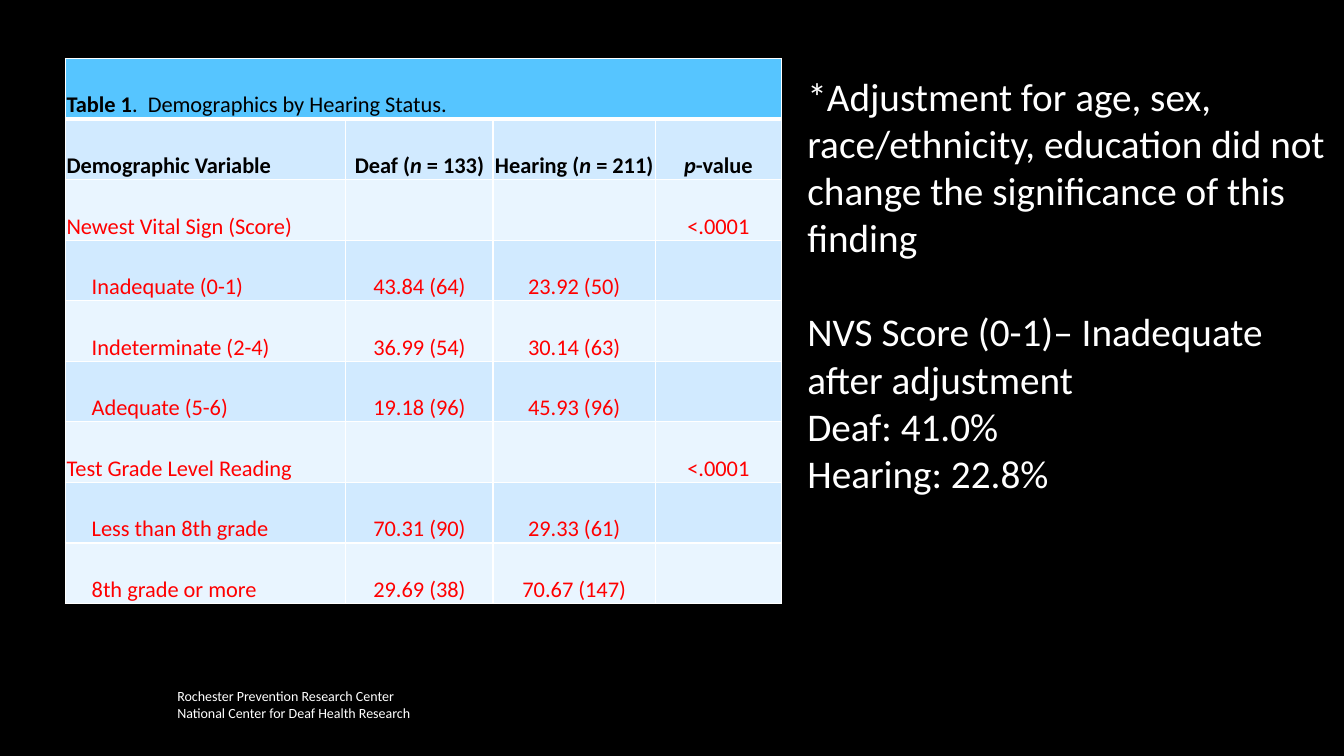
from lxml.etree import SubElement
from pptx import Presentation
from pptx.dml.color import RGBColor
from pptx.enum.text import MSO_ANCHOR as Anchor, PP_ALIGN as Align
from pptx.oxml.ns import qn
from pptx.util import Inches, Pt

COLORS = {"black": "000000", "white": "FFFFFF", "red": "FF0000",
          "title": "56C5FF", "dark_band": "D1EAFF", "light_band": "E9F5FF"}
FONT = "Calibri"
TITLE = [("Table 1", "b"), (".  Demographics by Hearing Status.", "")]
HEADINGS = [
    [("Demographic Variable", "b")],
    [("Deaf (", "b"), ("n", "bi"), (" = 133)", "b")],
    [("Hearing (", "b"), ("n", "bi"), (" = 211)", "b")],
    [("p", "bi"), ("-value", "b")],
]
MEASURES = [
    ("Newest Vital Sign (Score)", "", "", "<.0001"),
    ("Inadequate (0-1)", "43.84 (64)", "23.92 (50)", ""),
    ("Indeterminate (2-4)", "36.99 (54)", "30.14 (63)", ""),
    ("Adequate (5-6)", "19.18 (96)", "45.93 (96)", ""),
    ("Test Grade Level Reading", "", "", "<.0001"),
    ("Less than 8th grade", "70.31 (90)", "29.33 (61)", ""),
    ("8th grade or more", "29.69 (38)", "70.67 (147)", ""),
]
COLUMN_WIDTHS = [2.78, 1.46, 1.61, 1.25]
FINDINGS = [
    "*Adjustment for age, sex, race/ethnicity, education did not change "
    "the significance of this finding",
    "NVS Score (0-1)– Inadequate after adjustment",
    "Deaf: 41.0%",
    "Hearing: 22.8%",
]
CENTERS = ["Rochester Prevention Research Center",
           "National Center for Deaf Health Research"]


def rgb(name):
    """Return the named palette colour."""
    return RGBColor.from_string(COLORS[name])


def set_font(para, size, color):
    """Set the font that all runs of a paragraph share."""
    para.font.name = FONT
    para.font.size = Pt(size)
    para.font.color.rgb = rgb(color)


def add_border(cell, side, width):
    """Draw one white cell border."""
    line = SubElement(cell._tc.get_or_add_tcPr(), qn(f"a:ln{side}"), w=str(Pt(width)))
    fill = SubElement(line, qn("a:solidFill"))
    SubElement(fill, qn("a:srgbClr"), val=COLORS["white"])


def style_cell(cell, row, column, fill, indent):
    """Set the borders, fill, margins and anchor of a cell."""
    heavy_side = {0: "B", 1: "T"}.get(row)
    for side in "LRTB":
        add_border(cell, side, 3 if side == heavy_side else 1)
    cell.fill.solid()
    cell.fill.fore_color.rgb = rgb(fill)
    cell.vertical_anchor = Anchor.BOTTOM
    cell.margin_left = Inches(0.26 if indent else 0.01)
    cell.margin_right = cell.margin_top = Inches(0.01)
    cell.margin_bottom = 0
    para = cell.text_frame.paragraphs[0]
    para.alignment = Align.CENTER if column else Align.LEFT
    set_font(para, 16, "red" if row > 1 else "black")


def add_demographics(page, left, top, width, height):
    """Add the demographics table in the given box."""
    rows = [[TITLE, [], [], []], HEADINGS]
    rows += [[[(text, "")] if text else [] for text in measure] for measure in MEASURES]
    table = page.shapes.add_table(len(rows), len(COLUMN_WIDTHS), Inches(left),
                                  Inches(top), Inches(width), Inches(height)).table
    table.first_row = table.horz_banding = False
    for column, column_width in zip(table.columns, COLUMN_WIDTHS):
        column.width = Inches(column_width)
    for r, entries in enumerate(rows):
        fill = "title" if r == 0 else "dark_band" if r % 2 else "light_band"
        is_group = bool(entries[3])
        for c, spans in enumerate(entries):
            cell = table.cell(r, c)
            style_cell(cell, r, c, fill, r > 1 and c == 0 and not is_group)
            for text, marks in spans:
                span = cell.text_frame.paragraphs[0].add_run()
                span.text = text
                span.font.bold = "b" in marks
                span.font.italic = "i" in marks
    table.cell(0, 0).merge(table.cell(0, 3))


def add_text(page, left, top, width, height, lines, size, anchor=Anchor.TOP, gap_at=None):
    """Add white lines of text, with an empty line's gap before line gap_at."""
    frame = page.shapes.add_textbox(Inches(left), Inches(top), Inches(width),
                                    Inches(height)).text_frame
    frame.word_wrap = True
    frame.vertical_anchor = anchor
    for index, line in enumerate(lines):
        para = frame.paragraphs[0] if index == 0 else frame.add_paragraph()
        para.text = line
        set_font(para, size, "white")
        if index == gap_at:
            para.space_before = Pt(size * 1.2)


def add_results_slide(deck):
    """Add the slide with the table, its findings and the footer."""
    page = deck.slides.add_slide(deck.slide_layouts[6])
    page.background.fill.solid()
    page.background.fill.fore_color.rgb = rgb("black")
    add_text(page, 1.66, 6.67, 3.58, 0.64, CENTERS, 10, Anchor.MIDDLE)
    add_demographics(page, 0.65, 0.58, 7.1, 5.41)
    add_text(page, 7.91, 0.67, 5.33, 4.34, FINDINGS, 28, gap_at=1)


def main():
    """Build and save the deck."""
    deck = Presentation()
    deck.slide_width, deck.slide_height = Inches(13.33), Inches(7.5)
    add_results_slide(deck)
    deck.save("out.pptx")


if __name__ == "__main__":
    main()
